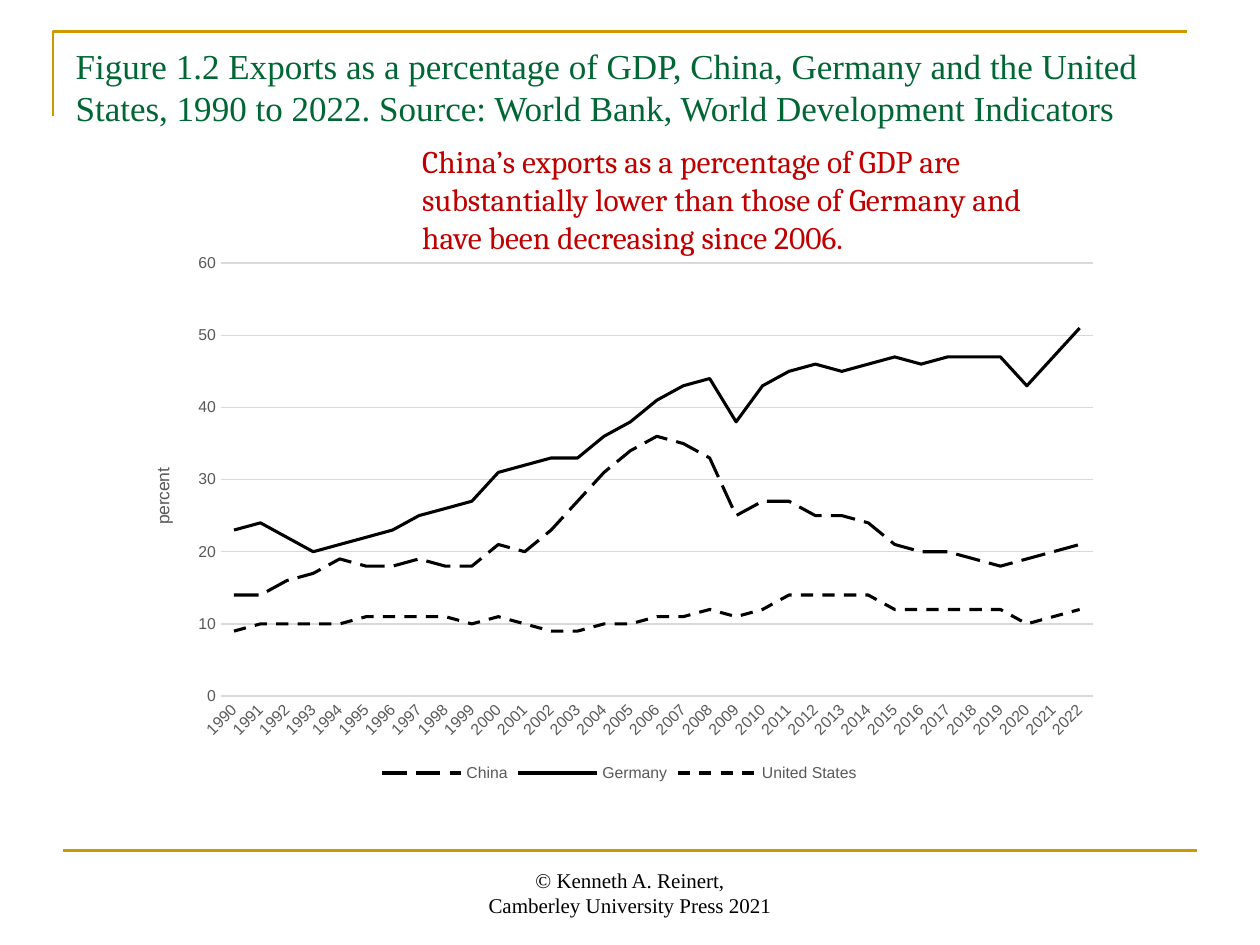
from dataclasses import dataclass

from lxml import etree
from pptx import Presentation
from pptx import util as u
from pptx.chart import data as cd
from pptx.dml.color import RGBColor as Rgb
from pptx.enum import chart as ch, dml, shapes, text
from pptx.oxml.ns import qn


@dataclass(frozen=True)
class Theme:
    gold: str = "CC9900"
    green: str = "006633"
    red: str = "C00000"
    black: str = "000000"
    grey: str = "595959"
    grid: str = "D9D9D9"
    serif: str = "Times New Roman"
    note: str = "Cambria"
    sans: str = "Arial"
    title_pt: float = 20
    note_pt: float = 18
    foot_pt: float = 12
    axis_pt: float = 10
    tick_pt: float = 9
    rule_pt: float = 1.5
    line_pt: float = 1.75
    grid_pt: float = 0.75


T = Theme()

YEARS = [str(y) for y in range(1990, 2023)]
SERIES = [
    ("China", dml.MSO_LINE.LONG_DASH,
     [14, 14, 16, 17, 19, 18, 18, 19, 18, 18, 21, 20, 23, 27, 31, 34, 36,
      35, 33, 25, 27, 27, 25, 25, 24, 21, 20, 20, 19, 18, 19, 20, 21]),
    ("Germany", dml.MSO_LINE.SOLID,
     [23, 24, 22, 20, 21, 22, 23, 25, 26, 27, 31, 32, 33, 33, 36, 38, 41,
      43, 44, 38, 43, 45, 46, 45, 46, 47, 46, 47, 47, 47, 43, 47, 51]),
    ("United States", dml.MSO_LINE.DASH,
     [9, 10, 10, 10, 10, 11, 11, 11, 11, 10, 11, 10, 9, 9, 10, 10, 11,
      11, 12, 11, 12, 14, 14, 14, 14, 12, 12, 12, 12, 12, 10, 11, 12]),
]


def style(font, size, color, face):
    font.size, font.name, font.bold = u.Pt(size), face, False
    font.color.rgb = Rgb.from_string(color)


def stroke(line, color, width):
    line.color.rgb = Rgb.from_string(color)
    line.width = u.Pt(width)


def write(frame, *lines, size, color, face, align=text.PP_ALIGN.LEFT,
          anchor=text.MSO_ANCHOR.TOP):
    frame.word_wrap = True
    frame.auto_size = text.MSO_AUTO_SIZE.NONE
    frame.vertical_anchor = anchor
    for i, words in enumerate(lines):
        para = frame.paragraphs[0] if i == 0 else frame.add_paragraph()
        para.alignment = align
        run = para.add_run()
        run.text = words
        style(run.font, size, color, face)


def add_head(slide, x, y, w, h):
    # Corner rule to the upper left of the title
    left, top = x - u.Cm(0.2), y - u.Cm(0.13)
    pen = slide.shapes.build_freeform(left, top + u.Cm(1.7))
    pen.add_line_segments([(left, top), (left + w, top)], close=False)
    rule = pen.convert_to_shape()
    rule.shadow.inherit = False
    rule.fill.background()
    stroke(rule.line, T.gold, T.rule_pt)
    # Title
    title = slide.shapes.title
    title.left, title.top, title.width, title.height = x, y, w, h
    write(title.text_frame,
          "Figure 1.2 Exports as a percentage of GDP, China, Germany and the "
          "United States, 1990 to 2022. Source: World Bank, World Development "
          "Indicators", size=T.title_pt, color=T.green, face=T.serif)


def add_note(slide, x, y, w, h):
    box = slide.shapes.add_textbox(x, y, w, h)
    write(box.text_frame,
          "China’s exports as a percentage of GDP are substantially lower "
          "than those of Germany and",
          "have been decreasing since 2006.",
          size=T.note_pt, color=T.red, face=T.note)


def add_plot(slide, x, y, w, h):
    data = cd.CategoryChartData(number_format="0")
    data.categories = YEARS
    for name, _, vals in SERIES:
        data.add_series(name, vals)
    chart = slide.shapes.add_chart(ch.XL_CHART_TYPE.LINE, x, y, w, h,
                                   data).chart
    chart.has_title = False
    style(chart.font, T.axis_pt, T.black, T.sans)
    # Series
    plot = chart.plots[0]
    plot.vary_by_categories = False
    for series, (_, dash, _) in zip(plot.series, SERIES):
        series.smooth = False
        series.marker.style = ch.XL_MARKER_STYLE.NONE
        stroke(series.format.line, T.black, T.line_pt)
        series.format.line.dash_style = dash
    # Axes
    cat, val = chart.category_axis, chart.value_axis
    for axis in (cat, val):
        axis.major_tick_mark = axis.minor_tick_mark = ch.XL_TICK_MARK.NONE
        style(axis.tick_labels.font, T.tick_pt, T.grey, T.sans)
    stroke(cat.format.line, T.grid, T.grid_pt)
    turn = cat.tick_labels.font._element.getparent().getparent().getparent()
    turn.find(qn("a:bodyPr")).set("rot", str(-45 * 60000))
    val.minimum_scale, val.maximum_scale, val.major_unit = 0, 60, 10
    val.format.line.fill.background()
    stroke(val.major_gridlines.format.line, T.grid, T.grid_pt)
    write(val.axis_title.text_frame, "percent", size=T.axis_pt, color=T.grey,
          face=T.sans, align=text.PP_ALIGN.CENTER)
    # Legend
    chart.has_legend = True
    chart.legend.position = ch.XL_LEGEND_POSITION.BOTTOM
    chart.legend.include_in_layout = False
    style(chart.legend.font, T.tick_pt, T.grey, T.sans)


def add_foot(slide, x, y, w, h):
    # Rule across the foot
    rule = slide.shapes.add_connector(shapes.MSO_CONNECTOR.STRAIGHT,
                                      x, y, x + w, y)
    stroke(rule.line, T.gold, T.rule_pt)
    etree.SubElement(rule._element.spPr, qn("a:effectLst"))
    # Credit
    wide, gap = u.Cm(8.05), u.Cm(0.2)
    box = slide.shapes.add_textbox(x + (w - wide) // 2, y + gap, wide, h - gap)
    write(box.text_frame, "© Kenneth A. Reinert,",
          "Camberley University Press 2021",
          size=T.foot_pt, color=T.black, face=T.serif,
          align=text.PP_ALIGN.CENTER, anchor=text.MSO_ANCHOR.BOTTOM)


def main():
    deck = Presentation()
    deck.slide_width, deck.slide_height = u.Cm(25.4), u.Cm(19.05)
    slide = deck.slides.add_slide(deck.slide_layouts[5])
    parts = [
        (add_head, (1.27, 0.76, 22.86, 1.98)),
        (add_plot, (2.54, 4.9, 19.89, 10.97)),
        (add_note, (8.26, 2.74, 12.7, 2.57)),
        (add_foot, (1.27, 17.15, 22.86, 1.47)),
    ]
    for add, box in parts:
        add(slide, *map(u.Cm, box))
    deck.save("out.pptx")


if __name__ == "__main__":
    main()
